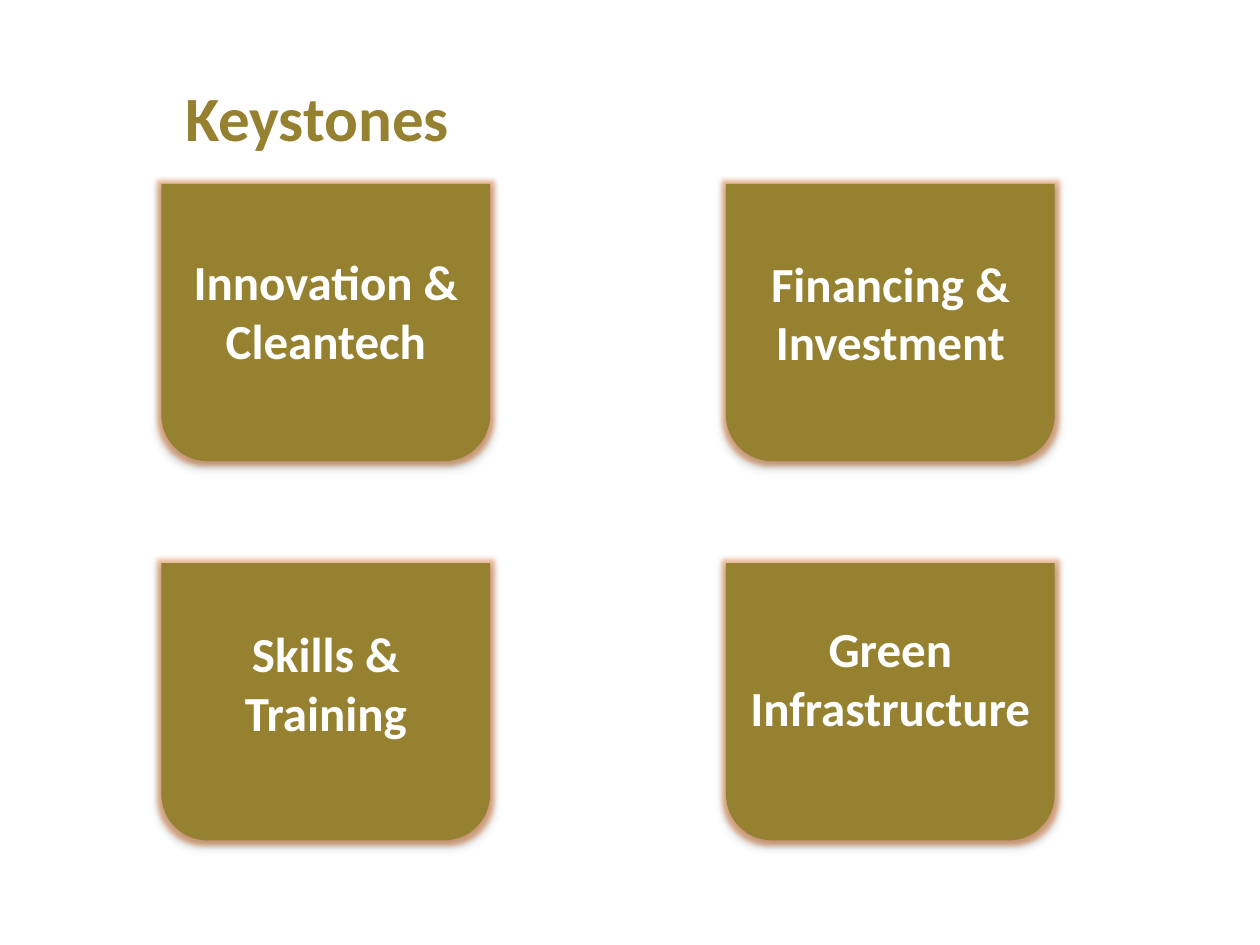
"""Build the Keystones slide: a titled two-by-two grid of glowing panels."""
from lxml import etree
from pptx import Presentation
from pptx import util as u
from pptx.dml.color import RGBColor
from pptx.enum import shapes, text
from pptx.oxml import ns

OLIVE = RGBColor(0x96, 0x81, 0x30)
WHITE = RGBColor(0xFF, 0xFF, 0xFF)
GLOW = RGBColor(0xE0, 0x70, 0x20)
BLACK = RGBColor(0, 0, 0)

TITLE = "Keystones"
KEYSTONES = [
    [("Innovation & Cleantech", 140.4), ("Financing & Investment", 141.1)],
    [("Skills & Training", 352.8), ("Green Infrastructure", 349.9)],
]

GRID_LEFT, GRID_TOP = 92.2, 105.1
COLUMN_STEP, ROW_STEP = 322.6, 216.7
PANEL_WIDTH, PANEL_HEIGHT = 187.9, 158.4
LABEL_HEIGHT = 74.9


def write(frame, words, size, color, align, anchor, inset=None):
    frame.word_wrap = True
    frame.vertical_anchor = anchor
    if inset is not None:
        frame.margin_left = frame.margin_right = u.Pt(inset)
        frame.margin_top = frame.margin_bottom = u.Pt(inset)
    line = frame.paragraphs[0]
    line.alignment = align
    run = line.add_run()
    run.text = words
    run.font.name = "Calibri"
    run.font.size = u.Pt(size)
    run.font.bold = True
    run.font.color.rgb = color


def add_effect(effects, tag, color, alpha, **settings):
    effect = etree.SubElement(effects, ns.qn(tag), {k: str(v) for k, v in settings.items()})
    tint = etree.SubElement(effect, ns.qn("a:srgbClr"), val=str(color))
    etree.SubElement(tint, ns.qn("a:alpha"), val=str(alpha * 1000))


def add_panel(slide, left, top):
    panel = slide.shapes.add_shape(
        shapes.MSO_SHAPE.ROUND_2_SAME_RECTANGLE,
        u.Pt(left), u.Pt(top), u.Pt(PANEL_WIDTH), u.Pt(PANEL_HEIGHT))
    panel.rotation = 180
    panel.fill.solid()
    panel.fill.fore_color.rgb = OLIVE
    panel.line.fill.background()
    panel.shadow.inherit = False
    effects = panel._element.spPr.find(ns.qn("a:effectLst"))
    add_effect(effects, "a:glow", GLOW, 40, rad=u.Pt(5))
    add_effect(effects, "a:outerShdw", BLACK, 32, blurRad=u.Pt(3.5),
               dist=u.Pt(2.2), dir=90 * 60000, rotWithShape=0)


def add_label(slide, words, left, top):
    label = slide.shapes.add_textbox(
        u.Pt(left), u.Pt(top), u.Pt(PANEL_WIDTH), u.Pt(LABEL_HEIGHT))
    write(label.text_frame, words, size=28, color=WHITE,
          align=text.PP_ALIGN.CENTER, anchor=text.MSO_ANCHOR.TOP)
    label.text_frame.auto_size = text.MSO_AUTO_SIZE.SHAPE_TO_FIT_TEXT


def main():
    deck = Presentation()
    deck.slide_width, deck.slide_height = u.Pt(720), u.Pt(540)
    slide = deck.slides.add_slide(deck.slide_layouts[5])

    title = slide.shapes.title
    title.left, title.top = u.Pt(105.8), u.Pt(21.6)
    title.width, title.height = u.Pt(578.2), u.Pt(90)
    write(title.text_frame, TITLE, size=36, color=OLIVE, inset=0,
          align=text.PP_ALIGN.LEFT, anchor=text.MSO_ANCHOR.MIDDLE)

    for row, keystones in enumerate(KEYSTONES):
        for column, (words, label_top) in enumerate(keystones):
            left = GRID_LEFT + column * COLUMN_STEP
            add_panel(slide, left, GRID_TOP + row * ROW_STEP)
            add_label(slide, words, left, label_top)

    deck.save("out.pptx")


if __name__ == "__main__":
    main()
